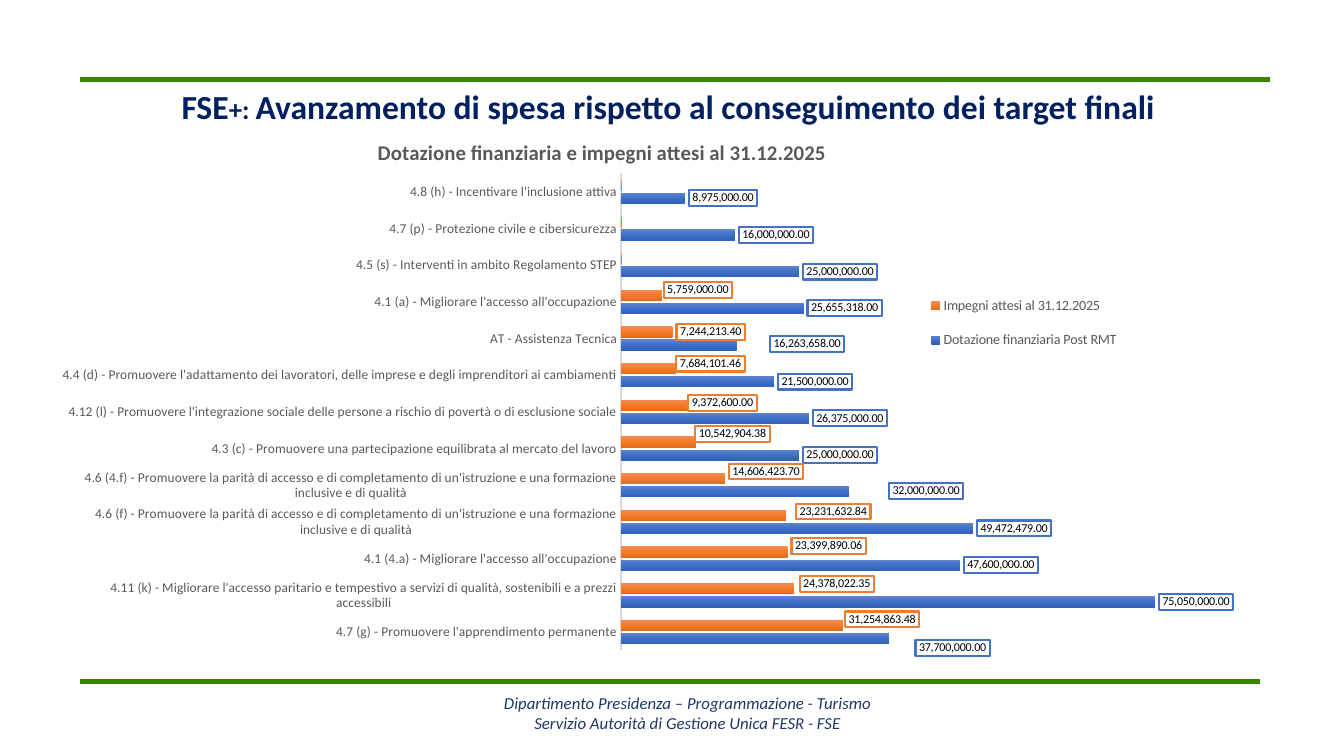
"""Build the FSE+ spending progress slide with its clustered bar chart."""
import copy
from dataclasses import dataclass
from typing import Optional

import lxml.etree
import pptx
import pptx.chart.data
import pptx.dml.color
import pptx.enum.chart
import pptx.enum.shapes
import pptx.enum.text
import pptx.oxml
import pptx.oxml.ns
import pptx.util

Inches = pptx.util.Inches
Pt = pptx.util.Pt
RGBColor = pptx.dml.color.RGBColor
qn = pptx.oxml.ns.qn

FONT = "Calibri"
GREEN = RGBColor(0x38, 0x86, 0x00)
NAVY = RGBColor(0x00, 0x20, 0x60)
FOOTER_BLUE = RGBColor(0x20, 0x38, 0x64)
GREY = RGBColor(0x59, 0x59, 0x59)
AXIS_GREY = RGBColor(0xD9, 0xD9, 0xD9)
BLACK = RGBColor(0, 0, 0)
WHITE = RGBColor(0xFF, 0xFF, 0xFF)
BLUE = RGBColor(0x44, 0x72, 0xC4)
ORANGE = RGBColor(0xED, 0x7D, 0x31)
BLUE_GRADIENT = (RGBColor(0x61, 0x83, 0xCB), RGBColor(0x3E, 0x70, 0xCA), RGBColor(0x30, 0x62, 0xBB))
ORANGE_GRADIENT = (RGBColor(0xF1, 0x8C, 0x57), RGBColor(0xF6, 0x7B, 0x28), RGBColor(0xE5, 0x6C, 0x19))
AMOUNT_FORMAT = '_(* #,##0.00_);_(* \\(#,##0.00\\);_(* "-"??_);_(@_)'

Shift = Optional[tuple[float, float]]


@dataclass
class Priority:
    label: str
    allocation: float
    commitment: float = 0
    allocation_shift: Shift = None
    commitment_shift: Shift = None


@dataclass
class Measure:
    name: str
    values: list[float]
    shifts: list[Shift]
    gradient: tuple[RGBColor, RGBColor, RGBColor]
    border: RGBColor


@dataclass
class Rule:
    y: float
    right: float


RULES = [Rule(0.79, 12.6), Rule(6.76, 12.5)]
FOOTER = ["Dipartimento Presidenza – Programmazione - Turismo",
          "Servizio Autorità di Gestione Unica FESR - FSE"]
PRIORITIES = [
    Priority("4.7 (g) - Promuovere l'apprendimento permanente",
             37700000, 31254863.48, (0.019, 0.017), (-0.002, -0.011)),
    Priority("4.11 (k) - Migliorare l'accesso paritario e tempestivo a servizi di qualità, "
             "sostenibili e a prezzi accessibili", 75050000, 24378022.35, None, (0.001, -0.009)),
    Priority("4.1 (4.a) - Migliorare l'accesso all'occupazione",
             47600000, 23399890.06, None, (0, -0.011)),
    Priority("4.6 (f) - Promuovere la parità di accesso e di completamento di un'istruzione "
             "e una formazione inclusive e di qualità", 49472479, 23231632.84, None, (0.005, -0.007)),
    Priority("4.6 (4.f) - Promuovere la parità di accesso e di completamento di un'istruzione "
             "e una formazione inclusive e di qualità", 32000000, 14606423.7, (0.031, -0.001), (0, -0.013)),
    Priority("4.3 (c) - Promuovere una partecipazione equilibrata al mercato del lavoro",
             25000000, 10542904.38, None, (-0.004, -0.015)),
    Priority("4.12 (l) - Promuovere l'integrazione sociale delle persone a rischio di povertà "
             "o di esclusione sociale", 26375000, 9372600, None, (-0.003, -0.004)),
    Priority("4.4 (d) - Promuovere l'adattamento dei lavoratori, delle imprese e degli "
             "imprenditori ai cambiamenti", 21500000, 7684101.46, None, (-0.003, -0.009)),
    Priority("AT - Assistenza Tecnica", 16263658, 7244213.4, (0.025, -0.002)),
    Priority("4.1 (a) - Migliorare l'accesso all'occupazione",
             25655318, 5759000, None, (-0.002, -0.009)),
    Priority("4.5 (s) - Interventi in ambito Regolamento STEP", 25000000),
    Priority("4.7 (p) - Protezione civile e cibersicurezza", 16000000),
    Priority("4.8 (h) - Incentivare l'inclusione attiva", 8975000),
]
MEASURES = [
    Measure("Dotazione finanziaria Post RMT", [p.allocation for p in PRIORITIES],
            [p.allocation_shift for p in PRIORITIES], BLUE_GRADIENT, BLUE),
    Measure("Impegni attesi al 31.12.2025", [p.commitment for p in PRIORITIES],
            [p.commitment_shift for p in PRIORITIES], ORANGE_GRADIENT, ORANGE),
]


def set_font(font, size: float, color: RGBColor, bold: bool = False, italic: bool = False) -> None:
    font.name, font.size, font.bold, font.italic = FONT, Pt(size), bold, italic
    font.color.rgb = color


def make_layout(**settings):
    layout = pptx.oxml.parse_xml(
        '<c:layout xmlns:c="http://schemas.openxmlformats.org/drawingml/2006/chart">'
        "<c:manualLayout/></c:layout>")
    for tag, value in settings.items():
        lxml.etree.SubElement(layout[0], qn(f"c:{tag}")).set("val", str(value))
    return layout


def place(parent, after: str, **settings) -> None:
    for old in parent.findall(qn("c:layout")):
        parent.remove(old)
    layout = make_layout(**settings)
    anchor = parent.find(qn(after)) if after else None
    if anchor is None:
        parent.insert(0, layout)
    else:
        anchor.addnext(layout)


def draw_rule(slide, rule: Rule) -> None:
    line = slide.shapes.add_connector(pptx.enum.shapes.MSO_CONNECTOR.STRAIGHT,
                                      Inches(0.79), Inches(rule.y), Inches(rule.right), Inches(rule.y))
    line.line.color.rgb = GREEN
    line.line.width = Pt(3.25)
    lxml.etree.SubElement(line._element.spPr, qn("a:effectLst"))


def write_title(slide) -> None:
    heading = slide.shapes.title
    heading.left, heading.top, heading.width, heading.height = map(Inches, (0.76, 0.8, 11.81, 0.5))
    frame = heading.text_frame
    frame.auto_size = pptx.enum.text.MSO_AUTO_SIZE.NONE
    frame.vertical_anchor = pptx.enum.text.MSO_ANCHOR.TOP
    line = frame.paragraphs[0]
    line.alignment = pptx.enum.text.PP_ALIGN.CENTER
    fund = line.add_run()
    fund.text = "FSE+: "
    fund.font._element.set("cap", "small")
    line.add_run().text = "Avanzamento di spesa rispetto al conseguimento dei target finali "
    set_font(line.font, 24, NAVY, bold=True)


def write_footer(slide) -> None:
    frame = slide.shapes.add_textbox(Inches(0.52), Inches(6.87), Inches(12.6), Inches(0.57)).text_frame
    frame.word_wrap = True
    frame.margin_top = frame.margin_bottom = 0
    frame.text = "\n".join(FOOTER)
    for line in frame.paragraphs:
        line.alignment = pptx.enum.text.PP_ALIGN.CENTER
        set_font(line.font, 12, FOOTER_BLUE, italic=True)


def fill_bars(series, measure: Measure) -> None:
    series.invert_if_negative = False
    fill = series.format.fill
    fill.gradient()
    fill.gradient_angle = 270
    stop_list = series._element.find(f".//{qn('a:gsLst')}")
    stop_list.insert(1, copy.deepcopy(stop_list[0]))
    for stop, position, color in zip(fill.gradient_stops, (0, 0.5, 1), measure.gradient):
        stop.position = position
        stop.color.rgb = color


def label_bars(series, measure: Measure) -> None:
    labels = series.data_labels
    labels.show_value = True
    labels.number_format, labels.number_format_is_linked = AMOUNT_FORMAT, False
    labels.position = pptx.enum.chart.XL_LABEL_POSITION.OUTSIDE_END
    set_font(labels.font, 8.6, BLACK)
    element = labels._element
    element.find(qn("c:showLeaderLines")).set("val", "0")
    box = pptx.oxml.parse_xml(
        '<c:spPr xmlns:c="http://schemas.openxmlformats.org/drawingml/2006/chart" '
        'xmlns:a="http://schemas.openxmlformats.org/drawingml/2006/main">'
        f'<a:solidFill><a:srgbClr val="{WHITE}"/></a:solidFill><a:ln w="{Pt(1.5)}">'
        f'<a:solidFill><a:srgbClr val="{measure.border}"/></a:solidFill></a:ln></c:spPr>')
    element.find(qn("c:numFmt")).addnext(box)
    shared = [part for part in element if part.tag != qn("c:showLeaderLines")]
    special = [i for i, value in enumerate(measure.values) if measure.shifts[i] or not value]
    for order, index in enumerate(special):
        label = element.makeelement(qn("c:dLbl"))
        element.insert(order, label)
        lxml.etree.SubElement(label, qn("c:idx")).set("val", str(index))
        if measure.values[index]:
            x, y = measure.shifts[index]
            label.append(make_layout(x=x, y=y))
            label.extend(copy.deepcopy(part) for part in shared)
        else:
            lxml.etree.SubElement(label, qn("c:delete")).set("val", "1")


def draw_chart(slide) -> None:
    data = pptx.chart.data.CategoryChartData()
    data.categories = [priority.label for priority in PRIORITIES]
    for measure in MEASURES:
        data.add_series(measure.name, measure.values)
    chart = slide.shapes.add_chart(pptx.enum.chart.XL_CHART_TYPE.BAR_CLUSTERED, Inches(0.62), Inches(1.31),
                                   Inches(11.65), Inches(5.39), data).chart
    set_font(chart.font, 10, BLACK)
    caption = chart.chart_title.text_frame
    caption.text = "Dotazione finanziaria e impegni attesi al 31.12.2025"
    set_font(caption.paragraphs[0].font, 14.9, GREY, bold=True)
    place(chart.chart_title._element, "c:tx", xMode="edge", yMode="edge", x=0.263, y=0.004)
    place(chart._chartSpace.chart.plotArea, "", layoutTarget="inner", xMode="edge", yMode="edge",
          x=0.474, y=0.076, w=0.486, h=0.878)

    priorities, amounts = chart.category_axis, chart.value_axis
    priorities.major_tick_mark = pptx.enum.chart.XL_TICK_MARK.NONE
    priorities.format.line.color.rgb = AXIS_GREY
    priorities.format.line.width = Pt(1)
    set_font(priorities.tick_labels.font, 9.6, GREY)
    amounts.visible = amounts.has_major_gridlines = False
    amounts.minimum_scale, amounts.maximum_scale = 0, 80_000_000

    chart.has_legend = True
    chart.legend.position = pptx.enum.chart.XL_LEGEND_POSITION.BOTTOM
    chart.legend.include_in_layout = False
    set_font(chart.legend.font, 10.1, GREY)
    place(chart.legend._element, "c:legendPos", xMode="edge", yMode="edge", x=0.718, y=0.271, w=0.2, h=0.16)

    bars = chart.plots[0]
    bars.gap_width, bars.overlap, bars.vary_by_categories = 115, -20, False
    for series, measure in zip(bars.series, MEASURES):
        fill_bars(series, measure)
        label_bars(series, measure)


def main() -> None:
    deck = pptx.Presentation()
    deck.slide_width, deck.slide_height = Inches(13.33), Inches(7.5)
    slide = deck.slides.add_slide(deck.slide_layouts[5])
    for rule in RULES:
        draw_rule(slide, rule)
    write_footer(slide)
    write_title(slide)
    draw_chart(slide)
    deck.save("out.pptx")


if __name__ == "__main__":
    main()
